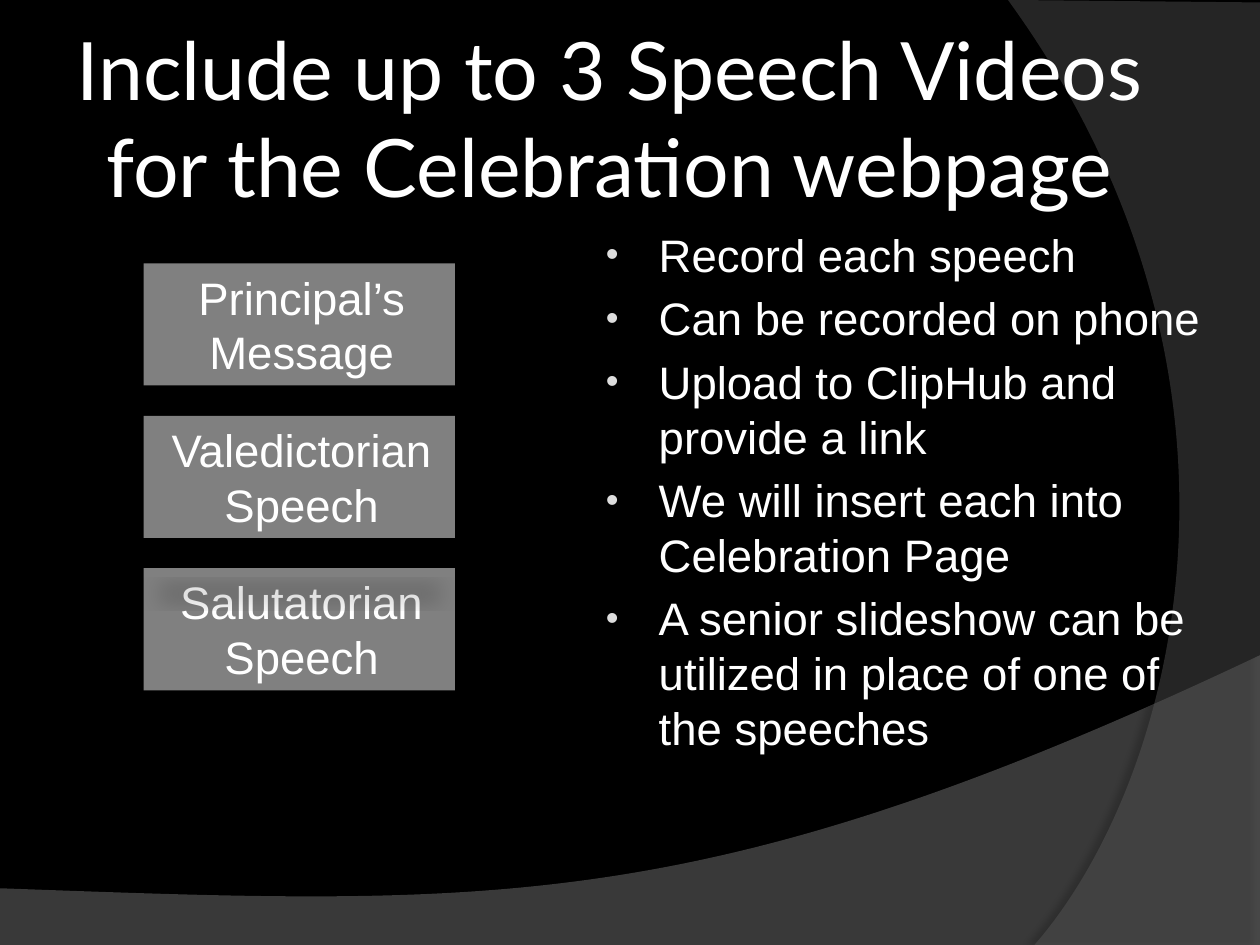
from lxml import etree
from pptx import Presentation
from pptx.dml.color import RGBColor
from pptx.enum.shapes import MSO_SHAPE
from pptx.enum.text import MSO_ANCHOR, PP_ALIGN
from pptx.oxml.ns import qn
from pptx.util import Inches, Pt

RECTANGLE = MSO_SHAPE.RECTANGLE
CENTER = PP_ALIGN.CENTER
TOP, MIDDLE = MSO_ANCHOR.TOP, MSO_ANCHOR.MIDDLE

COLORS = {
    "background": "000000",
    "text": "FFFFFF",
    "bullet": "DDDDDD",
    "speech box": "808080",
    "lower wave": "7F7F7F",
    "right wave": "5E5E5E",
    "shadow": "000000",
}


def add_shadow(shape, alpha, blur, dist, angle, **scale):
    """Give the shape an outer shadow; alpha in percent, blur and dist in points."""
    effects = etree.SubElement(shape._element.spPr, qn("a:effectLst"))
    shadow = etree.SubElement(
        effects, qn("a:outerShdw"), blurRad=str(Pt(blur)), dist=str(Pt(dist)),
        dir=str(angle * 60000), **scale, rotWithShape="0")
    color = etree.SubElement(shadow, qn("a:srgbClr"), val=COLORS["shadow"])
    etree.SubElement(color, qn("a:alpha"), val=str(alpha * 1000))


def add_text(paragraph, text, font, size):
    run = paragraph.add_run()
    run.text = text
    run.font.name = font
    run.font.size = Pt(size)
    run.font.color.rgb = RGBColor.from_string(COLORS["text"])


prs = Presentation()
prs.slide_width, prs.slide_height = Inches(10), Inches(7.5)
slide = prs.slides.add_slide(prs.slide_layouts[6])
slide.background.fill.solid()
slide.background.fill.fore_color.rgb = RGBColor.from_string(COLORS["background"])

# Background waves: a cubic curve closed by straight edges
waves = [
    ("lower wave", 45, [(10, 5.2), (5.59, 7.29), (3.91, 7.19), (0, 7.05)],
     [(0, 7.51), (10, 7.51)], (35, 4, 3.5, 270)),
    ("right wave", 40, [(8.21, 7.5), (9.35, 6.19), (10.18, 3), (8, 0)],
     [(10, 0.02), (10, 7.5)], (45, 4, 4, 180)),
]
for name, opacity, curve, corners, shadow in waves:
    start, *controls, end = curve
    builder = slide.shapes.build_freeform(Inches(start[0]), Inches(start[1]))
    builder.add_line_segments(
        [(Inches(x), Inches(y)) for x, y in [end] + corners], close=True)
    wave = builder.convert_to_shape()

    # The first edge becomes the curve, in coordinates local to the shape
    edge = next(wave._element.iter(qn("a:lnTo")))
    bend = etree.Element(qn("a:cubicBezTo"))
    for x, y in controls + [end]:
        etree.SubElement(bend, qn("a:pt"), x=str(Inches(x) - wave.left),
                         y=str(Inches(y) - wave.top))
    edge.getparent().replace(edge, bend)

    wave.fill.solid()
    wave.fill.fore_color.rgb = RGBColor.from_string(COLORS[name])
    wave_color = wave._element.spPr.find(qn("a:solidFill"))[0]
    etree.SubElement(wave_color, qn("a:alpha"), val=str(opacity * 1000))
    wave.line.fill.background()
    add_shadow(wave, *shadow)

# Title
title = slide.shapes.add_textbox(
    Inches(0.5), Inches(0.3), Inches(8.67), Inches(1.25)).text_frame
title.word_wrap = True
title.vertical_anchor = MIDDLE
title.margin_left = title.margin_right = Inches(0.05)
heading = title.paragraphs[0]
heading.alignment = CENTER
add_text(heading, "Include up to 3 Speech Videos", "Lato", 46)
heading.add_line_break()
add_text(heading, "for the Celebration webpage", "Lato", 46)

# Instructions
instructions = [
    "Record each speech",
    "Can be recorded on phone",
    "Upload to ClipHub and provide a link",
    "We will insert each into Celebration Page",
    "A senior slideshow can be utilized in place of one of the speeches",
]
body = slide.shapes.add_textbox(
    Inches(4.67), Inches(1.75), Inches(5), Inches(4.95)).text_frame
body.word_wrap = True
for index, instruction in enumerate(instructions):
    item = body.add_paragraph() if index else body.paragraphs[0]
    item.space_before = Pt(5.2)
    props = item._p.get_or_add_pPr()
    props.set("marL", str(Inches(0.46)))
    props.set("indent", str(Inches(-0.42)))
    bullet_color = etree.SubElement(props, qn("a:buClr"))
    etree.SubElement(bullet_color, qn("a:srgbClr"), val=COLORS["bullet"])
    etree.SubElement(props, qn("a:buSzPct"), val="80000")
    etree.SubElement(props, qn("a:buFont"), typeface="Arial")
    etree.SubElement(props, qn("a:buChar"), char="•")
    add_text(item, instruction, "Arial", 26)

# Speech boxes, by row; the middle one lies in front and shades the lowest
speeches = [
    (0, "Principal’s Message"),
    (2, "Salutatorian Speech"),
    (1, "Valedictorian Speech"),
]
for row, speech in speeches:
    box = slide.shapes.add_shape(
        RECTANGLE, Inches(1.14), Inches(2.09 + 1.21 * row), Inches(2.47), Inches(0.97))
    box.fill.solid()
    box.fill.fore_color.rgb = RGBColor.from_string(COLORS["speech box"])
    box.line.fill.background()
    add_shadow(box, 15, 12, 25, 90, sx="90000", sy="-19000")
    box.text_frame.word_wrap = True
    box.text_frame.vertical_anchor = TOP
    label = box.text_frame.paragraphs[0]
    label.alignment = CENTER
    label.space_before = Pt(5.2)
    label._p.get_or_add_pPr().set("marL", str(Inches(0.04)))
    add_text(label, speech, "Arial", 26)

prs.save("out.pptx")
